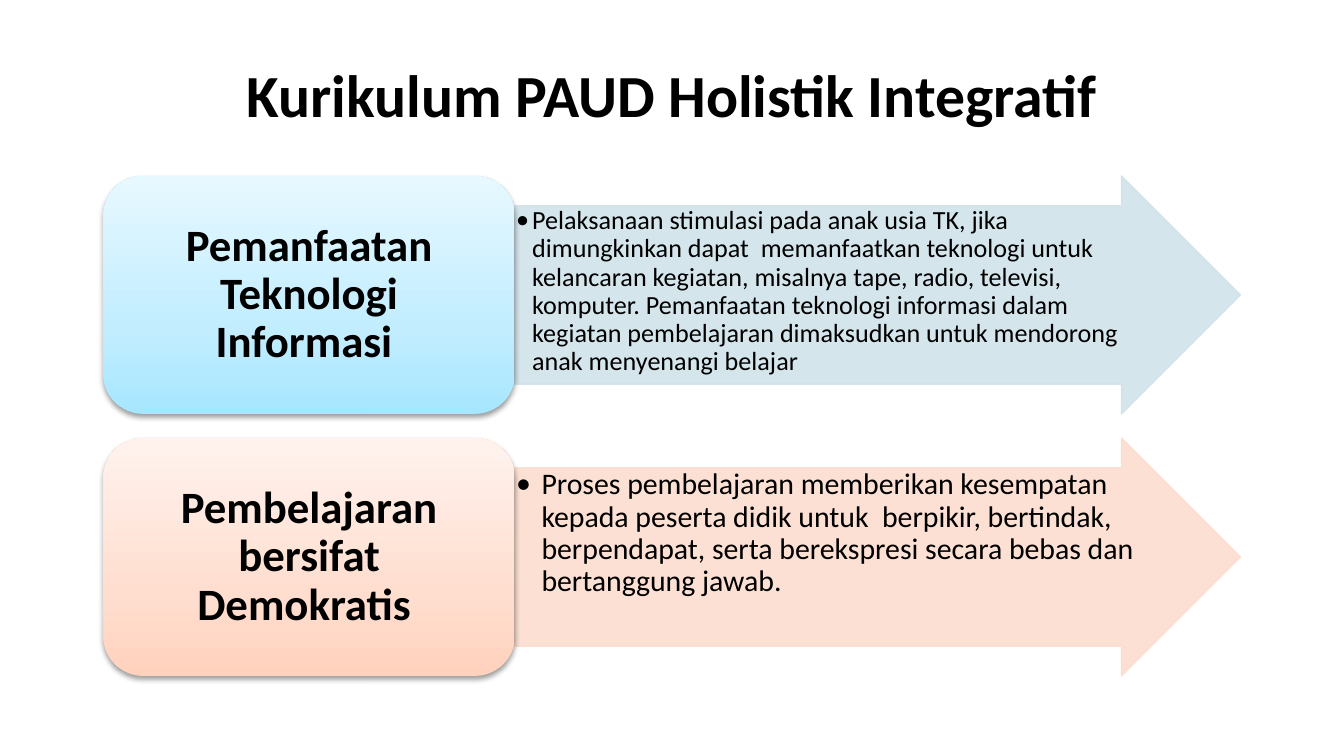
import pptx
import pptx.util
import pptx.dml.color
import pptx.enum.shapes
import pptx.enum.text
import pptx.oxml
import pptx.oxml.ns
from pptx.util import Inches

FONT = "Calibri"
COLORS = {
    "text": "000000",
    "blue_arrow": "D0E3EA",
    "orange_arrow": "FCDDCF",
    "blue_card": ("A7E6FF", "C1EDFF", "E7F8FF"),
    "orange_card": ("FFD2BD", "FFDED0", "FFF2ED"),
}
STOPS = (0, 35, 100)
NS = pptx.oxml.ns.nsdecls("a")
qn = pptx.oxml.ns.qn
SHAPES = pptx.enum.shapes.MSO_SHAPE
ANCHOR = pptx.enum.text.MSO_ANCHOR
ALIGN = pptx.enum.text.PP_ALIGN

ROWS = [
    {
        "color": "blue",
        "label": "Pemanfaatan Teknologi Informasi ",
        "detail": "Pelaksanaan stimulasi pada anak usia TK, jika dimungkinkan "
                  "dapat  memanfaatkan teknologi untuk kelancaran kegiatan, "
                  "misalnya tape, radio, televisi, komputer. Pemanfaatan "
                  "teknologi informasi dalam kegiatan pembelajaran dimaksudkan "
                  "untuk mendorong anak menyenangi belajar",
        "size": 14,
        "indent": 0.12,
    },
    {
        "color": "orange",
        "label": "Pembelajaran bersifat Demokratis ",
        "detail": "Proses pembelajaran memberikan kesempatan kepada peserta "
                  "didik untuk  berpikir, bertindak, berpendapat, serta "
                  "berekspresi secara bebas dan bertanggung jawab. ",
        "size": 16,
        "indent": 0.19,
    },
]


def rgb(value):
    return pptx.dml.color.RGBColor.from_string(value)


def style_font(font, size, bold=False):
    font.name = FONT
    font.size = pptx.util.Pt(size)
    font.bold = bold
    font.color.rgb = rgb(COLORS["text"])


def add_panel(page, kind, left, top, width, height):
    shape = page.shapes.add_shape(
        kind, Inches(left), Inches(top), Inches(width), Inches(height))
    shape.shadow.inherit = False
    return shape


def add_text(page, text, left, top, width, height, size, bold=False):
    box = page.shapes.add_textbox(
        Inches(left), Inches(top), Inches(width), Inches(height))
    box.text_frame.word_wrap = True
    para = box.text_frame.paragraphs[0]
    para.text = text
    para.line_spacing = 0.9
    style_font(para.runs[0].font, size, bold)
    return box.text_frame


def add_title(page, text, left, top, width, height):
    title = page.shapes.title
    title.left, title.top = Inches(left), Inches(top)
    title.width, title.height = Inches(width), Inches(height)
    title.text_frame.text = text
    title.text_frame.vertical_anchor = ANCHOR.MIDDLE
    para = title.text_frame.paragraphs[0]
    para.alignment = ALIGN.CENTER
    style_font(para.runs[0].font, 32, True)


def add_arrow(page, row, left, top, width, height):
    arrow = add_panel(page, SHAPES.RIGHT_ARROW, left, top, width, height)
    arrow.adjustments[0] = 0.75
    arrow.adjustments[1] = 0.5
    color = rgb(COLORS[row["color"] + "_arrow"])
    arrow.line.width = pptx.util.Pt(0.75)
    for fill in (arrow.fill, arrow.line.fill):
        fill.solid()
        fill.fore_color.rgb = color
    for node in arrow._element.spPr.iter(qn("a:srgbClr")):
        node.append(pptx.oxml.parse_xml(f'<a:alpha {NS} val="90000"/>'))

    # Bulleted text inside the arrow's shaft
    frame = add_text(page, row["detail"], left, top + height / 8,
                     width - 0.66, height * 0.75, row["size"])
    frame.margin_left = frame.margin_right = Inches(0.01)
    frame.margin_top = frame.margin_bottom = Inches(0.01)
    para = frame.paragraphs[0]
    para.level = 1
    properties = para._p.get_or_add_pPr()
    properties.set("marL", str(Inches(row["indent"])))
    properties.set("indent", str(-Inches(row["indent"])))
    properties.append(pptx.oxml.parse_xml(
        f'<a:buFont {NS} typeface="{FONT}"/>'))
    properties.append(pptx.oxml.parse_xml(f'<a:buChar {NS} char="•"/>'))


def add_card(page, row, left, top, width, height):
    card = add_panel(page, SHAPES.ROUNDED_RECTANGLE, left, top, width, height)
    card.line.fill.background()

    # Gradient running upwards, and a soft shadow below
    card.fill.gradient()
    properties = card._element.spPr
    stops = "".join(
        f'<a:gs pos="{stop * 1000}"><a:srgbClr val="{color}"/></a:gs>'
        for stop, color in zip(STOPS, COLORS[row["color"] + "_card"]))
    properties.replace(properties.find(qn("a:gradFill")), pptx.oxml.parse_xml(
        f'<a:gradFill {NS} rotWithShape="1"><a:gsLst>{stops}</a:gsLst>'
        '<a:lin ang="16200000" scaled="0"/></a:gradFill>'))
    properties.find(qn("a:effectLst")).append(pptx.oxml.parse_xml(
        f'<a:outerShdw {NS} blurRad="{pptx.util.Pt(3.1)}" '
        f'dist="{pptx.util.Pt(1.6)}" dir="5400000" rotWithShape="0">'
        '<a:srgbClr val="000000"><a:alpha val="38000"/></a:srgbClr>'
        '</a:outerShdw>'))

    inset = 0.09
    frame = add_text(page, row["label"], left + inset, top + inset,
                     width - 2 * inset, height - 2 * inset, 24, True)
    frame.vertical_anchor = ANCHOR.MIDDLE
    frame.paragraphs[0].alignment = ALIGN.CENTER


def add_row(page, row, left, top, width, height):
    card_width = 3.06
    add_arrow(page, row, left + card_width, top, width - card_width, height)
    add_card(page, row, left, top, card_width, height)


def main():
    deck = pptx.Presentation()
    # Widescreen, 16:9
    deck.slide_width = Inches(10)
    deck.slide_height = deck.slide_width * 9 // 16
    page = deck.slides.add_slide(deck.slide_layouts[5])
    add_title(page, "Kurikulum PAUD Holistik Integratif", 0.5, 0.23, 9, 0.94)
    for index, row in enumerate(ROWS):
        add_row(page, row, 0.77, 1.31 + index * 1.95, 8.46, 1.77)
    deck.save("out.pptx")


if __name__ == "__main__":
    main()
